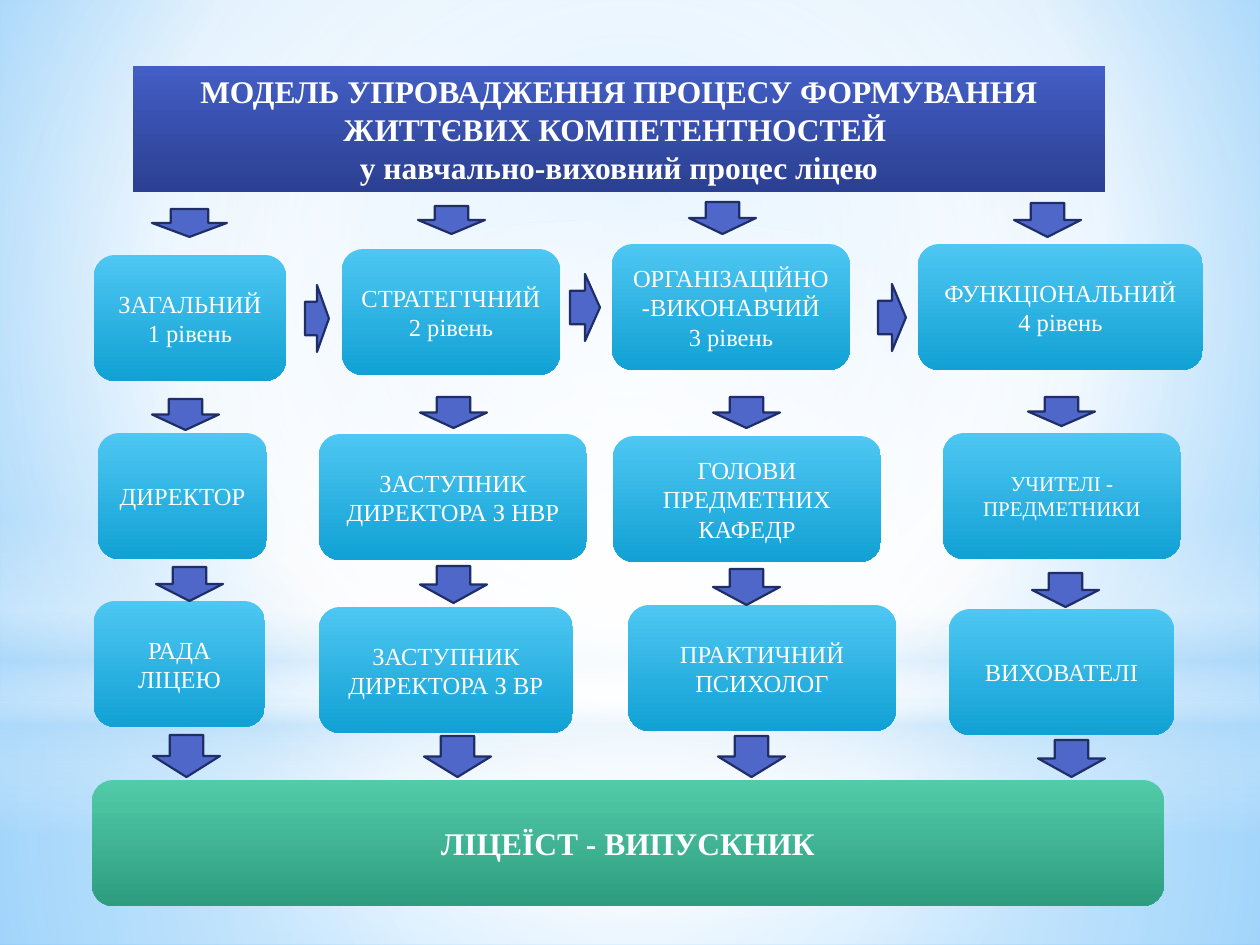
import pptx
import pptx.util
import pptx.dml.color
import pptx.enum.shapes
import pptx.enum.text
import pptx.oxml
import pptx.oxml.ns

SHAPE = pptx.enum.shapes.MSO_SHAPE
SCALE = 914400 / 126
WIDTH, HEIGHT = 1260, 945
BOX_H, ARROW_W = 126, 67
COLORS = {
    "white": "FFFFFF", "mist": "B4DCFA", "sky": "9ED5FF", "azure": "5BB9FF",
    "title_top": "435EC5", "title_low": "2B4092",
    "box_top": "4EC7F2", "box_low": "11A1D4",
    "goal_top": "52CBA9", "goal_low": "2E9D7F",
    "arrow": "4E67C8", "edge": "1F2E69",
}
CENTER = (50, 50, 50, 50)


def emu(px):
    return round(px * SCALE)


def rgb(name):
    return pptx.dml.color.RGBColor.from_string(COLORS[name])


def set_gradient(fill, root, stops, focus=None):
    fill.gradient()
    old = root.find(".//" + pptx.oxml.ns.qn("a:gradFill"))
    marks = "".join(
        f'<a:gs pos="{pos * 1000}"><a:srgbClr val="{COLORS[name]}">'
        f'<a:alpha val="{alpha * 1000}"/></a:srgbClr></a:gs>'
        for pos, name, alpha in stops)
    if focus:
        sides = " ".join(f'{k}="{v * 1000}"' for k, v in zip("ltrb", focus))
        course = f'<a:path path="circle"><a:fillToRect {sides}/></a:path>'
    else:
        course = '<a:lin ang="5400000" scaled="0"/>'
    new = pptx.oxml.parse_xml(
        f'<a:gradFill {pptx.oxml.ns.nsdecls("a")} rotWithShape="1">'
        f'<a:gsLst>{marks}</a:gsLst>{course}</a:gradFill>')
    old.getparent().replace(old, new)


def write(sp, text, size=14, bold=False, color="white", font="Times New Roman"):
    tf = sp.text_frame
    tf.word_wrap = True
    tf.vertical_anchor = pptx.enum.text.MSO_ANCHOR.MIDDLE
    for i, line in enumerate(text.split("\n")):
        p = tf.add_paragraph() if i else tf.paragraphs[0]
        p.alignment = pptx.enum.text.PP_ALIGN.CENTER
        r = p.add_run()
        r.text = line
        r.font.name = font
        r.font.size = pptx.util.Pt(size)
        r.font.bold = bold
        r.font.color.rgb = rgb(color)


class Deck:
    def __init__(self):
        self.prs = pptx.Presentation()
        self.prs.slide_width, self.prs.slide_height = emu(WIDTH), emu(HEIGHT)
        self.s = self.prs.slides.add_slide(self.prs.slide_layouts[6])

    def shape(self, kind, x, y, w, h):
        sp = self.s.shapes.add_shape(kind, emu(x), emu(y), emu(w), emu(h))
        sp.shadow.inherit = False
        sp.line.fill.background()
        return sp

    def background(self, stops, focus):
        set_gradient(self.s.background.fill, self.s._element, stops, focus)

    def glow(self, y, h, stops, focus=None, kind=SHAPE.RECTANGLE):
        sp = self.shape(kind, 0, y, WIDTH, h)
        set_gradient(sp.fill, sp._element, stops, focus)

    def box(self, x, y, w, text, tone="box", kind=SHAPE.ROUNDED_RECTANGLE, **fmt):
        sp = self.shape(kind, x, y, w, BOX_H)
        stops = [(0, tone + "_top", 100), (100, tone + "_low", 100)]
        set_gradient(sp.fill, sp._element, stops)
        write(sp, text, **fmt)

    def arrow(self, kind, x, y, w, h):
        sp = self.shape(kind, x, y, w, h)
        sp.fill.solid()
        sp.fill.fore_color.rgb = rgb("arrow")
        sp.line.color.rgb = rgb("edge")
        sp.line.width = pptx.util.Pt(1.25)


BOXES = [
    (94, 255, 192, "ЗАГАЛЬНИЙ\n1 рівень", 14),
    (342, 249, 218, "СТРАТЕГІЧНИЙ\n2 рівень", 14),
    (612, 244, 238, "ОРГАНІЗАЦІЙНО-ВИКОНАВЧИЙ\n3 рівень", 14),
    (918, 244, 285, "ФУНКЦІОНАЛЬНИЙ\n4 рівень", 14),
    (98, 433, 169, "ДИРЕКТОР", 14),
    (319, 434, 268, "ЗАСТУПНИК ДИРЕКТОРА З НВР", 14),
    (613, 436, 268, "ГОЛОВИ ПРЕДМЕТНИХ КАФЕДР", 14),
    (943, 433, 238, "УЧИТЕЛІ - ПРЕДМЕТНИКИ", 12),
    (94, 601, 171, "РАДА ЛІЦЕЮ", 14),
    (319, 607, 254, "ЗАСТУПНИК ДИРЕКТОРА З ВР", 14),
    (628, 605, 268, "ПРАКТИЧНИЙ ПСИХОЛОГ", 14),
    (949, 609, 225, "ВИХОВАТЕЛІ", 14),
]
DOWN_ARROWS = [
    (418, 206, 28), (689, 202, 32), (1014, 203, 34),
    (152, 399, 31), (420, 397, 31), (713, 397, 31), (1028, 397, 29),
    (156, 567, 34), (420, 566, 37), (713, 569, 36), (1032, 573, 34),
    (153, 735, 42), (424, 736, 41), (718, 736, 41), (1038, 740, 37),
]
RIGHT_ARROWS = [(305, 285, 24), (570, 274, 30), (878, 284, 28)]


def main():
    deck = Deck()
    deck.background([(0, "sky", 100), (60, "white", 100), (100, "azure", 100)],
                    (20, 10, 20, 60))
    deck.glow(703, 242, [(0, "white", 91), (37, "white", 76), (100, "mist", 79)], CENTER)
    deck.glow(0, 703, [(0, "white", 89), (48, "white", 62), (100, "mist", 79)], CENTER)
    deck.glow(519, 315, [(0, "white", 0), (29, "white", 30), (45, "mist", 40),
                         (55, "white", 26), (65, "mist", 60), (100, "white", 0)])
    deck.glow(220, 703, [(0, "white", 100), (56, "white", 0)], CENTER, SHAPE.OVAL)

    deck.box(133, 66, 972,
             "МОДЕЛЬ УПРОВАДЖЕННЯ ПРОЦЕСУ ФОРМУВАННЯ ЖИТТЄВИХ КОМПЕТЕНТНОСТЕЙ \n"
             "у навчально-виховний процес ліцею",
             tone="title", kind=SHAPE.RECTANGLE, size=18, bold=True)
    for x, y, w, text, size in BOXES:
        deck.box(x, y, w, text, size=size)
    deck.box(92, 780, 1072, "ЛІЦЕЇСТ - ВИПУСКНИК", tone="goal", size=18, bold=True)

    deck.arrow(SHAPE.DOWN_ARROW, 152, 209, 75, 28)
    for x, y, h in DOWN_ARROWS:
        deck.arrow(SHAPE.DOWN_ARROW, x, y, ARROW_W, h)
    for x, y, w in RIGHT_ARROWS:
        deck.arrow(SHAPE.RIGHT_ARROW, x, y, w, ARROW_W)
    deck.prs.save("out.pptx")


if __name__ == "__main__":
    main()
